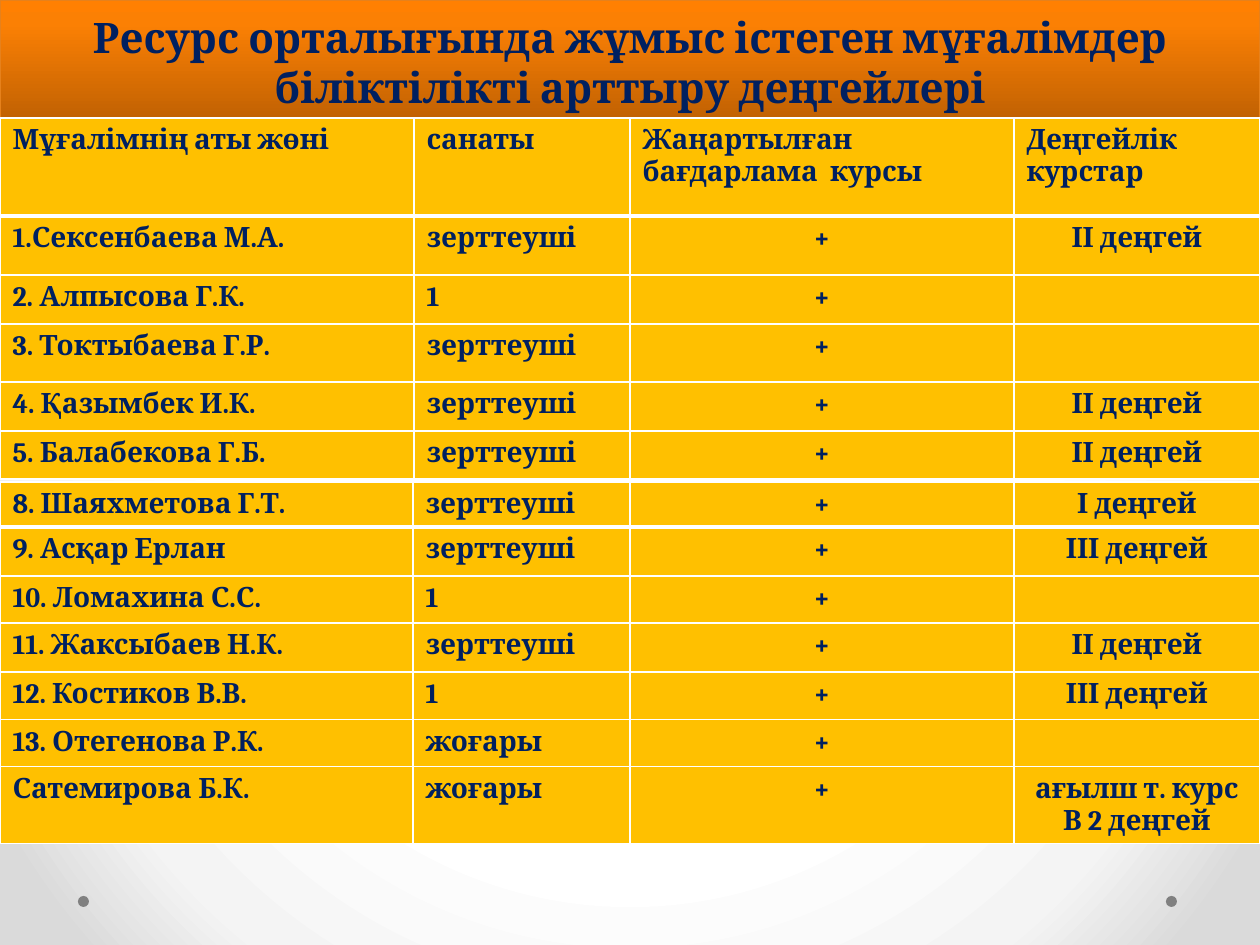
from lxml import etree
from pptx import Presentation
from pptx.dml.color import RGBColor
from pptx.enum.shapes import MSO_SHAPE
from pptx.enum.text import MSO_ANCHOR, PP_ALIGN
from pptx.oxml.ns import qn
from pptx.util import Pt

RECT, OVAL = MSO_SHAPE.RECTANGLE, MSO_SHAPE.OVAL
CENTER, LEFT = PP_ALIGN.CENTER, PP_ALIGN.LEFT
BOTTOM = MSO_ANCHOR.BOTTOM

NAVY = RGBColor(0x00, 0x20, 0x60)
AMBER = RGBColor(0xFF, 0xC0, 0x00)
ORANGE = RGBColor(0xE6, 0x81, 0x1C)
GRAY = RGBColor(0x80, 0x80, 0x80)
WHITE = RGBColor(0xFF, 0xFF, 0xFF)
BLACK = RGBColor(0x00, 0x00, 0x00)
SILVER = RGBColor(0xF4, 0xF4, 0xF4)
ASH = RGBColor(0xDA, 0xDA, 0xDA)
RUST = RGBColor(0xC2, 0x62, 0x03)
TANGERINE = RGBColor(0xFB, 0x80, 0x04)
BRIGHT = RGBColor(0xFF, 0x80, 0x02)

PX = 914400 // 126
W, H = 1260, 945
TITLE_FONT = {"name": "Cambria", "size": Pt(24), "bold": True}
CELL_FONT = {"name": "Cambria", "size": Pt(16), "bold": True}

TITLE = "Ресурс орталығында жұмыс істеген мұғалімдер біліктілікті арттыру деңгейлері"
COURSES = [
    ("Мұғалімнің аты жөні", "санаты", "Жаңартылған бағдарлама  курсы", "Деңгейлік курстар"),
    ("1.Сексенбаева М.А.", "зерттеуші", "+", "ІІ деңгей"),
    ("2. Алпысова Г.К.", "1", "+", ""),
    ("3. Токтыбаева Г.Р.", "зерттеуші", "+", ""),
    ("4. Қазымбек И.К.", "зерттеуші", "+", "ІІ деңгей"),
    ("5. Балабекова Г.Б.", "зерттеуші", "+", "ІІ деңгей"),
]
MORE_COURSES = [
    ("8. Шаяхметова Г.Т.", "зерттеуші", "+", "І деңгей"),
    ("9. Асқар Ерлан", "зерттеуші", "+", "ІІІ деңгей"),
    ("10. Ломахина С.С.", "1", "+", ""),
    ("11. Жаксыбаев Н.К.", "зерттеуші", "+", "ІІ деңгей"),
    ("12. Костиков В.В.", "1", "+", "ІІІ деңгей"),
    ("13. Отегенова Р.К.", "жоғары", "+", ""),
    ("Сатемирова Б.К.", "жоғары", "+", "ағылш т. курс В 2 деңгей"),
]


def add_xml(parent, tag, **attrs):
    el = etree.SubElement(parent, qn(tag))
    for name, value in attrs.items():
        el.set(name, str(value))
    return el


def set_gradient(parent, stops):
    grad = parent.makeelement(qn("a:gradFill"), {"rotWithShape": "1"})
    stop_list = add_xml(grad, "a:gsLst")
    for pos, color in stops:
        gs = add_xml(stop_list, "a:gs", pos=pos * 1000)
        add_xml(gs, "a:srgbClr", val=color)
    parent.replace(parent.find(qn("a:noFill")), grad)
    return grad


def write(p, text, align, font):
    p.alignment = align
    if not text:
        p._p.get_or_add_endParaRPr().set("sz", str(int(font["size"].pt * 100)))
        return
    r = p.add_run()
    r.text = text
    for name, value in font.items():
        setattr(r.font, name, value)
    r.font.color.rgb = NAVY


def add_background(s):
    s.background.fill.background()
    bg = next(s.element.iter(qn("p:bgPr")))
    grad = set_gradient(bg, [(50, WHITE), (76, SILVER), (92, ASH)])
    shade = add_xml(grad, "a:path", path="circle")
    add_xml(shade, "a:fillToRect", l=50000, t=50000, r=50000, b=50000)


def add_dots(s, x, y, w, size):
    for left in (x, x + w - size):
        sp = s.shapes.add_shape(OVAL, left * PX, y * PX, size * PX, size * PX)
        sp.shadow.inherit = False
        sp.fill.solid()
        sp.fill.fore_color.rgb = GRAY
        sp.line.fill.background()


def add_title(s, x, y, w, h):
    sp = s.shapes.add_shape(RECT, x * PX, y * PX, w * PX, h * PX)
    sp.line.color.rgb = ORANGE
    sp.line.width = Pt(0.75)
    sp.fill.background()
    sp.shadow.inherit = False
    sp_pr = sp._element.spPr
    grad = set_gradient(sp_pr, [(0, RUST), (80, TANGERINE), (100, BRIGHT)])
    add_xml(grad, "a:lin", ang=270 * 60000, scaled=0)
    shadow = add_xml(sp_pr.find(qn("a:effectLst")), "a:outerShdw", blurRad=Pt(3.1),
                     dist=Pt(1.8), dir=90 * 60000, rotWithShape=0)
    add_xml(add_xml(shadow, "a:srgbClr", val=BLACK), "a:alpha", val=35000)
    tf = sp.text_frame
    tf.word_wrap = True
    tf.vertical_anchor = BOTTOM
    write(tf.paragraphs[0], TITLE, CENTER, TITLE_FONT)


def set_borders(cell, top, bottom):
    tc_pr = cell._tc.get_or_add_tcPr()
    for side, width in (("L", 1), ("R", 1), ("T", top), ("B", bottom)):
        ln = add_xml(tc_pr, f"a:ln{side}", w=Pt(width))
        add_xml(add_xml(ln, "a:solidFill"), "a:srgbClr", val=WHITE)


def add_courses(s, x, y, widths, heights, rows, has_header):
    frame = s.shapes.add_table(len(rows), len(widths), x * PX, y * PX,
                               sum(widths) * PX, sum(heights) * PX)
    table = frame.table
    for col, width in zip(table.columns, widths):
        col.width = width * PX
    for i, (row, height, texts) in enumerate(zip(table.rows, heights, rows)):
        row.height = height * PX
        for j, (cell, text) in enumerate(zip(row.cells, texts)):
            set_borders(cell, 3 if i == 1 else 1, 3 if i == 0 else 1)
            cell.fill.solid()
            cell.fill.fore_color.rgb = AMBER
            is_heading = has_header and i == 0
            align = CENTER if j >= 2 and not is_heading else LEFT
            write(cell.text_frame.paragraphs[0], text, align, CELL_FONT)


def main():
    prs = Presentation()
    prs.slide_width, prs.slide_height = W * PX, H * PX
    s = prs.slides.add_slide(prs.slide_layouts[6])
    add_background(s)
    add_dots(s, 78, 896, 1099, 11)
    add_title(s, 0, 0, W, 118)
    add_courses(s, 0, 118, [414, 216, 384, 246], [98, 59, 49, 58, 49, 48], COURSES, True)
    add_courses(s, 0, 482, [413, 217, 384, 246], [45, 49, 45, 49, 48, 47, 77],
                MORE_COURSES, False)
    prs.save("out.pptx")


if __name__ == "__main__":
    main()
